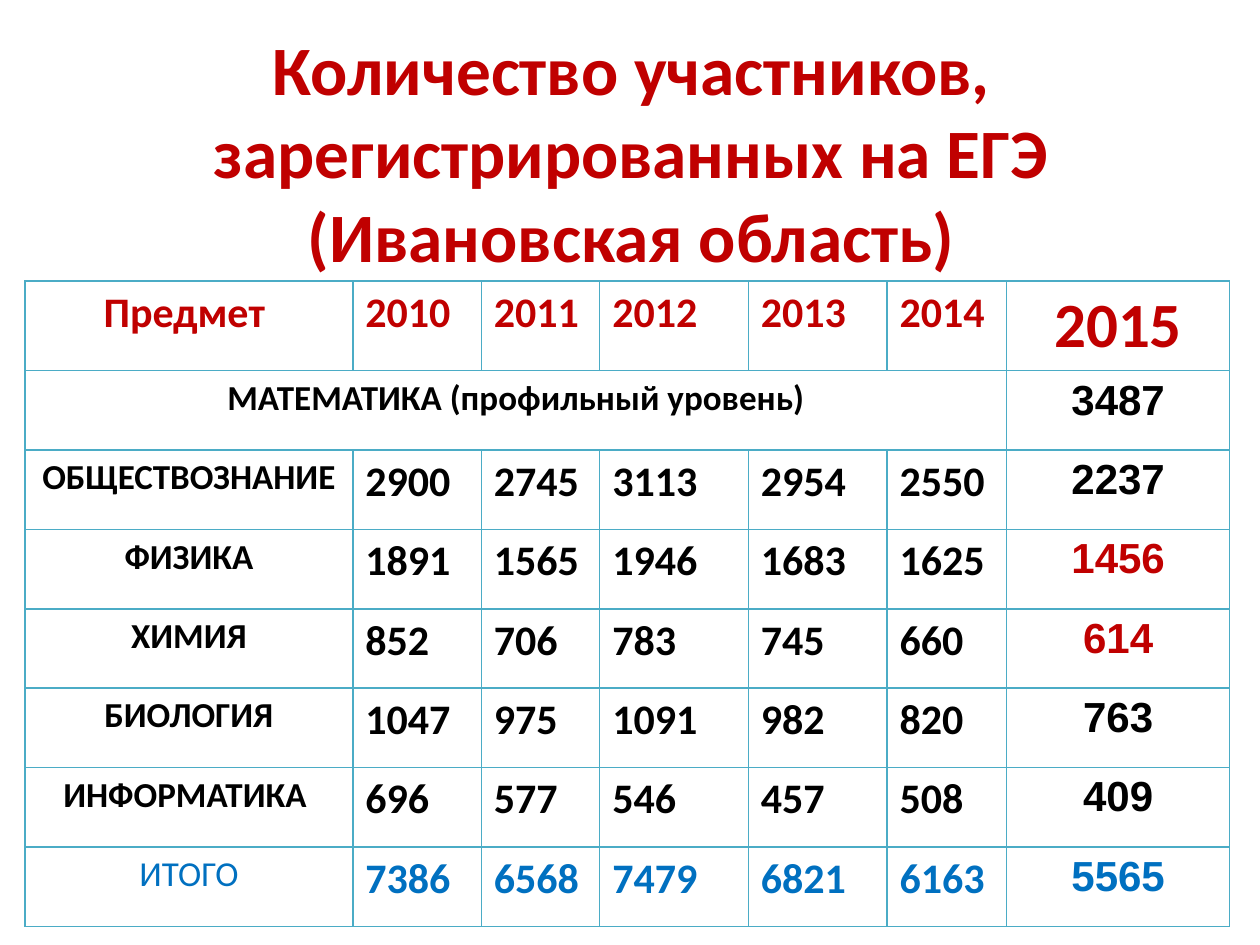
"""Builds a slide with a table of exam registrations by subject and year."""
from copy import deepcopy

from lxml import etree
from pptx import Presentation
from pptx import util as u
from pptx.dml.color import RGBColor
from pptx.enum import text
from pptx.oxml.ns import qn

COLORS = {"red": "C00000", "black": "000000", "blue": "0070C0", "border": "4BACC6"}
TITLE = "Количество участников, зарегистрированных на ЕГЭ (Ивановская область)"
COLUMN_WIDTHS = [2.6, 1.02, 0.94, 1.18, 1.1, 0.95, 1.77]
ROW_HEIGHT = 0.63
HEADER = ["Предмет ", "2010", "2011", "2012", "2013", "2014", "2015"]
MATHEMATICS = ["МАТЕМАТИКА (профильный уровень)", "3487"]
SUBJECTS = [
    ["ОБЩЕСТВОЗНАНИЕ", "2900", "2745", "3113", "2954", "2550", "2237"],
    ["ФИЗИКА", "1891", "1565", "1946", "1683", "1625", "1456"],
    ["ХИМИЯ", "852", "706", "783", "745", "660", "614"],
    ["БИОЛОГИЯ", "1047", "975", "1091", "982", "820", "763"],
    ["ИНФОРМАТИКА ", "696", "577", "546", "457", "508", "409"],
]
TOTALS = ["ИТОГО", "7386", "6568", "7479", "6821", "6163", "5565"]
HIGHLIGHTED = {"1456", "614"}


class SlideBuilder:
    """Holds the style and the current slide."""

    def __init__(self, presentation):
        self.slide = presentation.slides.add_slide(presentation.slide_layouts[5])
        self.font = "Calibri"
        self.accent_font = "Arial"

    def add_run(self, paragraph, content, size, color, font=None, bold=True):
        run = paragraph.add_run()
        run.text = content
        run.font.size = u.Pt(size)
        run.font.name = font or self.font
        run.font.bold = bold
        run.font.color.rgb = RGBColor.from_string(COLORS[color])
        return run

    def add_title(self, content, left, top, width, height):
        title = self.slide.shapes.title
        title.left, title.top = u.Inches(left), u.Inches(top)
        title.width, title.height = u.Inches(width), u.Inches(height)
        frame = title.text_frame
        frame.word_wrap = True
        frame.auto_size = text.MSO_AUTO_SIZE.NONE
        frame.vertical_anchor = text.MSO_ANCHOR.MIDDLE
        paragraph = frame.paragraphs[0]
        paragraph.alignment = text.PP_ALIGN.CENTER
        run = self.add_run(paragraph, content, 39.6, "red")
        paragraph.add_line_break()
        line_break = paragraph._p.find(qn("a:br"))
        line_break.append(deepcopy(run._r.find(qn("a:rPr"))))
        end = deepcopy(run._r.find(qn("a:rPr")))
        end.tag = qn("a:endParaRPr")
        paragraph._p.append(end)

    def add_table(self, left, top, widths, row_count):
        frame = self.slide.shapes.add_table(
            row_count, len(widths), u.Inches(left), u.Inches(top),
            u.Inches(sum(widths)), u.Inches(ROW_HEIGHT * row_count))
        table = frame.table
        table.first_row = table.horz_banding = False
        for column, width in zip(table.columns, widths):
            column.width = u.Inches(width)
        for row in table.rows:
            row.height = u.Inches(ROW_HEIGHT)
        for cell in table.iter_cells():
            self.add_borders(cell)
            cell.fill.background()
        return table

    def add_borders(self, cell):
        properties = cell._tc.get_or_add_tcPr()
        for side in ("lnL", "lnR", "lnT", "lnB"):
            line = etree.SubElement(properties, qn(f"a:{side}"), w=str(u.Pt(1)))
            fill = etree.SubElement(line, qn("a:solidFill"))
            etree.SubElement(fill, qn("a:srgbClr"), val=COLORS["border"])

    def fill_cell(self, cell, content, size, color, centered=False, **style):
        paragraph = cell.text_frame.paragraphs[0]
        if centered:
            paragraph.alignment = text.PP_ALIGN.CENTER
        self.add_run(paragraph, content, size, color, **style)

    def fill_header(self, table, labels):
        last = len(labels) - 1
        for index, label in enumerate(labels):
            self.fill_cell(table.cell(0, index), label, 36 if index == last else 24,
                           "red", centered=index in (0, last))

    def fill_row(self, table, row, values, color, bold_label=True):
        label, *years, latest = values
        self.fill_cell(table.cell(row, 0), label, 20, color, True, bold=bold_label)
        for column, value in enumerate(years, 1):
            self.fill_cell(table.cell(row, column), value, 24, color)
        latest_color = "red" if latest in HIGHLIGHTED else color
        self.fill_cell(table.cell(row, len(COLUMN_WIDTHS) - 1), latest, 24,
                       latest_color, True, font=self.accent_font)


def main():
    presentation = Presentation()
    presentation.slide_width, presentation.slide_height = u.Inches(10), u.Inches(7.5)
    builder = SlideBuilder(presentation)
    builder.add_title(TITLE, 0.51, 0.6, 9, 1.86)

    total_row = len(SUBJECTS) + 2
    table = builder.add_table(0.2, 2.23, COLUMN_WIDTHS, total_row + 1)
    builder.fill_header(table, HEADER)
    table.cell(1, 0).merge(table.cell(1, len(COLUMN_WIDTHS) - 2))
    builder.fill_row(table, 1, MATHEMATICS, "black")
    for row, values in enumerate(SUBJECTS, 2):
        builder.fill_row(table, row, values, "black")
    builder.fill_row(table, total_row, TOTALS, "blue", bold_label=False)
    presentation.save("out.pptx")


if __name__ == "__main__":
    main()
